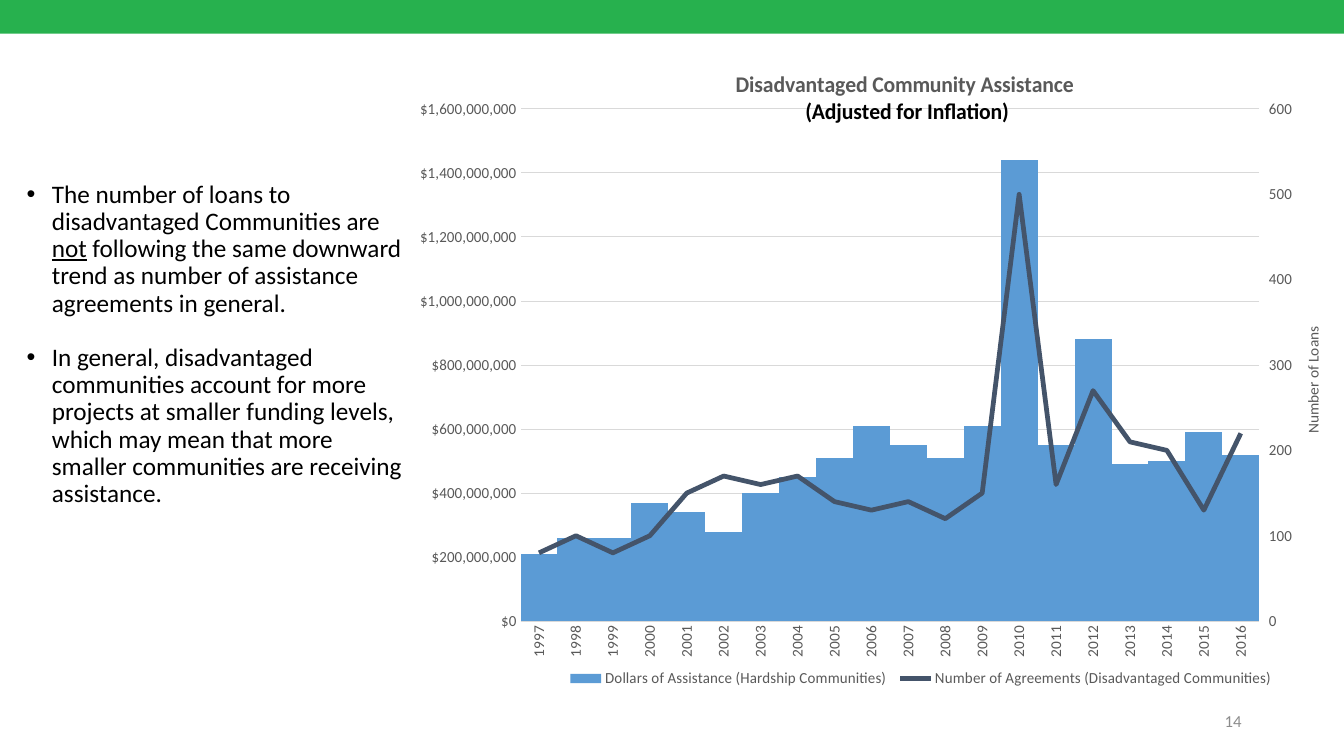
"""Build the disadvantaged community assistance slide with its combined chart."""
from copy import deepcopy

from lxml.etree import SubElement
from pptx import Presentation
from pptx.chart.axis import ValueAxis
from pptx.chart.data import CategoryChartData
from pptx.dml.color import RGBColor
from pptx.enum.chart import XL_CHART_TYPE as CT, XL_LEGEND_POSITION as LP
from pptx.enum.chart import XL_MARKER_STYLE as MS, XL_TICK_MARK as TM
from pptx.enum.shapes import MSO_SHAPE
from pptx.enum.text import MSO_ANCHOR, PP_ALIGN
from pptx.oxml.ns import qn
from pptx.util import Pt

COLORS = {"band": "27B14E", "black": "000000", "label": "595959", "grid": "D9D9D9",
          "number": "8C8C8C", "dollars": "5B9BD5", "loans": "44546A"}
C = {name: RGBColor.from_string(value) for name, value in COLORS.items()}


def set_font(font, size, color, bold=False):
    font.name, font.size, font.bold = "Calibri", Pt(size), bold
    font.color.rgb = C[color]


def set_layout(parent, index, **fractions):
    for old in parent.findall(qn("c:layout")):
        parent.remove(old)
    layout = SubElement(parent, qn("c:layout"))
    parent.insert(index, layout)
    manual = SubElement(layout, qn("c:manualLayout"))
    if "w" in fractions:
        SubElement(manual, qn("c:layoutTarget"), val="inner")
    for side in "xy":
        SubElement(manual, qn(f"c:{side}Mode"), val="edge")
    for side, value in fractions.items():
        SubElement(manual, qn(f"c:{side}"), val=str(value))


prs = Presentation()
prs.slide_width, prs.slide_height = Pt(960), Pt(540)
s = prs.slides.add_slide(prs.slide_layouts[6])

band = s.shapes.add_shape(MSO_SHAPE.RECTANGLE, 0, 0, Pt(960), Pt(24))
band.shadow.inherit = False
band.fill.solid()
band.fill.fore_color.rgb = C["band"]
band.line.fill.background()

points = [
    [("The number of loans to disadvantaged Communities are ", False), ("not", True),
     (" following the same downward trend as number of assistance agreements in general.", False)],
    [("In general, disadvantaged communities account for more projects at smaller funding "
      "levels, which may mean that more smaller communities are receiving assistance.", False)],
]
tf = s.shapes.add_textbox(Pt(12), Pt(126), Pt(288), Pt(402)).text_frame
tf.word_wrap = True
for i, parts in enumerate(points):
    p = tf.add_paragraph() if i else tf.paragraphs[0]
    p.line_spacing = 0.9
    if i:
        p.space_before = Pt(19.5)
    pPr = p._p.get_or_add_pPr()
    pPr.set("marL", str(Pt(18)))
    pPr.set("indent", str(-Pt(18)))
    SubElement(pPr, qn("a:buFont"), typeface="Arial")
    SubElement(pPr, qn("a:buChar"), char="•")
    for text, underlined in parts:
        r = p.add_run()
        r.text = text
        set_font(r.font, 18, "black")
        r.font.underline = underlined

tf = s.shapes.add_textbox(Pt(678), Pt(500.5), Pt(216), Pt(28.8)).text_frame
tf.word_wrap = True
tf.vertical_anchor = MSO_ANCHOR.MIDDLE
tf.text = "14"
tf.paragraphs[0].alignment = PP_ALIGN.RIGHT
set_font(tf.paragraphs[0].runs[0].font, 12, "number")

millions = [210, 260, 260, 370, 340, 280, 400, 450, 510, 610,
            550, 510, 610, 1440, 550, 880, 490, 500, 590, 520]
loans = [80, 100, 80, 100, 150, 170, 160, 170, 140, 130,
         140, 120, 150, 500, 160, 270, 210, 200, 130, 220]
data = CategoryChartData()
data.categories = [str(year) for year in range(1997, 2017)]
data.add_series("Dollars of Assistance (Hardship Communities) ", [m * 10**6 for m in millions])
data.add_series("Number of Agreements (Disadvantaged Communities)", loans)
chart = s.shapes.add_chart(CT.COLUMN_STACKED, Pt(300), Pt(28.8), Pt(648), Pt(467.3), data).chart
set_font(chart.font, 10, "black")

cat_axis, dollar_axis = chart.category_axis, chart.value_axis
cat_axis.format.line.color.rgb = C["grid"]
cat_axis.format.line.width = Pt(0.75)
dollar_axis.format.line.fill.background()
for axis in (cat_axis, dollar_axis):
    axis.major_tick_mark = axis.minor_tick_mark = TM.NONE
    set_font(axis.tick_labels.font, 11, "label")
cat_axis._element.find(f"{qn('c:txPr')}/{qn('a:bodyPr')}").set("rot", "-5400000")
dollar_axis.minimum_scale, dollar_axis.maximum_scale = 0, 1_600_000_000
dollar_axis.major_unit = 200_000_000
dollar_axis.tick_labels.number_format = '"$"#,##0'
dollar_axis.tick_labels.number_format_is_linked = False
dollar_axis.major_gridlines.format.line.color.rgb = C["grid"]
dollar_axis.major_gridlines.format.line.width = Pt(0.75)

bars = chart.plots[0]
bars.vary_by_categories = False
bars.gap_width, bars.overlap = 0, 100
bars.series[0].format.fill.solid()
bars.series[0].format.fill.fore_color.rgb = C["dollars"]

plot_area = cat_axis._element.getparent()
bar_chart = plot_area.find(qn("c:barChart"))
loan_ser = bar_chart.findall(qn("c:ser"))[1]
for bar_only in loan_ser.findall(qn("c:invertIfNegative")):
    loan_ser.remove(bar_only)
line_chart = SubElement(plot_area, qn("c:lineChart"))
bar_chart.addnext(line_chart)
SubElement(line_chart, qn("c:grouping"), val="standard")
SubElement(line_chart, qn("c:varyColors"), val="0")
line_chart.append(loan_ser)
SubElement(line_chart, qn("c:marker"), val="1")
for axis_id in ("5001", "5002"):
    SubElement(line_chart, qn("c:axId"), val=axis_id)

loan_line = chart.plots[1].series[0]
loan_line.smooth = False
loan_line.marker.style = MS.NONE
loan_line.format.line.color.rgb = C["loans"]
loan_line.format.line.width = Pt(3.5)

hidden_cat, loan_val = deepcopy(cat_axis._element), deepcopy(dollar_axis._element)
dollar_axis._element.addnext(loan_val)
loan_val.addnext(hidden_cat)
for element, own_id, cross_id in ((hidden_cat, "5001", "5002"), (loan_val, "5002", "5001")):
    element.find(qn("c:axId")).set("val", own_id)
    element.find(qn("c:crossAx")).set("val", cross_id)
ValueAxis(hidden_cat).visible = False
loan_axis = ValueAxis(loan_val)
loan_val.find(qn("c:axPos")).set("val", "r")
for crosses in loan_val.findall(qn("c:crosses")):
    loan_val.remove(crosses)
crosses = SubElement(loan_val, qn("c:crosses"), val="max")
loan_val.find(qn("c:crossAx")).addnext(crosses)
loan_axis.has_major_gridlines = False
loan_axis.major_tick_mark = TM.OUTSIDE
loan_axis.maximum_scale, loan_axis.major_unit = 600, 100
loan_axis.tick_labels.number_format = "General"
tf = loan_axis.axis_title.text_frame
tf.text = "Number of Loans"
tf._txBody.find(qn("a:bodyPr")).set("rot", "-5400000")
set_font(tf.paragraphs[0].runs[0].font, 11, "label")

tf = chart.chart_title.text_frame
tf.text = "Disadvantaged Community Assistance \n(Adjusted for Inflation)"
for p, color in zip(tf.paragraphs, ("label", "black")):
    set_font(p.runs[0].font, 16, color, bold=True)

chart.has_legend = True
chart.legend.position = LP.BOTTOM
chart.legend.include_in_layout = False
set_font(chart.legend.font, 11, "label")

set_layout(plot_area, 0, x=0.084, y=0.105, w=0.839, h=0.783)
set_layout(chart.chart_title._element, 1, x=0.325, y=0.04)
set_layout(chart.legend._element, 1, x=0.135, y=0.955)

prs.save("out.pptx")
